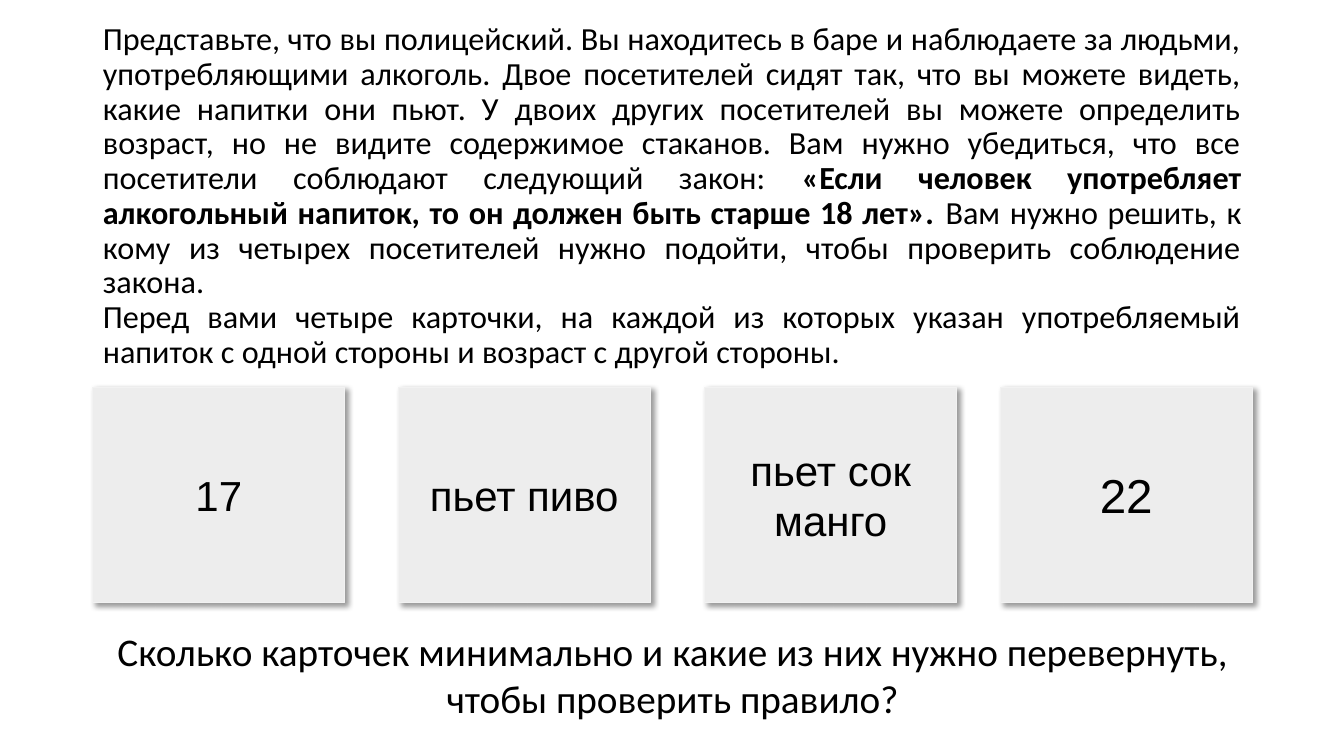
from dataclasses import dataclass

from lxml import etree
from pptx import Presentation
from pptx.dml.color import RGBColor
from pptx.enum.shapes import MSO_SHAPE as Shape
from pptx.enum.text import MSO_ANCHOR as Anchor, MSO_AUTO_SIZE as AutoSize, PP_ALIGN as Align
from pptx.oxml.ns import qn
from pptx.slide import Slide
from pptx.util import Inches, Pt


@dataclass(frozen=True)
class Theme:
    ink: RGBColor = RGBColor(0x00, 0x00, 0x00)
    card_fill: RGBColor = RGBColor(0xED, 0xED, 0xED)
    card_line: RGBColor = RGBColor(0xF2, 0xF2, 0xF2)
    text_font: str = "Calibri"
    card_font: str = "Arial"
    story_size: float = 23
    question_size: float = 28
    card_size: float = 30
    large_card_size: float = 34


@dataclass(frozen=True)
class Card:
    left: float
    label: str
    size: float


THEME = Theme()
MARGIN, CONTENT_WIDTH = 0.92, 11.5
CARD_TOP, CARD_WIDTH, CARD_HEIGHT = 3.84, 2.5, 2.14

SCENE = (
    "Представьте, что вы полицейский. Вы находитесь в баре и наблюдаете за людьми, "
    "употребляющими алкоголь. Двое посетителей сидят так, что вы можете видеть, какие "
    "напитки они пьют. У двоих других посетителей вы можете определить возраст, но не "
    "видите содержимое стаканов. Вам нужно убедиться, что все посетители соблюдают "
    "следующий закон: "
)
LAW = "«Если человек употребляет алкогольный напиток, то он должен быть старше 18 лет». "
TASK = (
    "Вам нужно решить, к кому из четырех посетителей нужно подойти, чтобы проверить "
    "соблюдение закона. "
)
CARDS_INTRO = (
    "Перед вами четыре карточки, на каждой из которых указан употребляемый напиток "
    "с одной стороны и возраст с другой стороны."
)
QUESTION = (
    "Сколько карточек минимально и какие из них нужно перевернуть, чтобы проверить правило?"
)
CARDS = [
    Card(MARGIN, "17", THEME.card_size),
    Card(3.95, "пьет пиво", THEME.card_size),
    Card(6.99, "пьет сок манго", THEME.card_size),
    Card(9.92, "22", THEME.large_card_size),
]


def style(para, align: Align, size: float, font: str) -> None:
    para.alignment = align
    para.font.size = Pt(size)
    para.font.name = font
    para.font.color.rgb = THEME.ink


def add_shadow(box) -> None:
    box.shadow.inherit = False
    effects = box._element.spPr.find(qn("a:effectLst"))
    shadow = etree.SubElement(
        effects, qn("a:outerShdw"), blurRad=str(Pt(4)), dist=str(Pt(3)),
        dir=str(45 * 60000), algn="tl", rotWithShape="0",
    )
    color = etree.SubElement(shadow, qn("a:srgbClr"), val="000000")
    etree.SubElement(color, qn("a:alpha"), val="40000")


def add_story(page: Slide) -> None:
    box = page.shapes.title
    box.left, box.top = Inches(MARGIN), Inches(0.4)
    box.width, box.height = Inches(CONTENT_WIDTH), Inches(3.1)
    frame = box.text_frame
    frame.word_wrap = True
    frame.auto_size = AutoSize.NONE
    frame.vertical_anchor = Anchor.MIDDLE
    para = frame.paragraphs[0]
    style(para, Align.JUSTIFY, THEME.story_size, THEME.text_font)
    para.line_spacing = 0.9
    para.add_run().text = SCENE
    law = para.add_run()
    law.text = LAW
    law.font.bold = True
    para.add_run().text = TASK
    para.add_line_break()
    para.add_run().text = CARDS_INTRO


def add_card(page: Slide, card: Card) -> None:
    box = page.shapes.add_shape(
        Shape.RECTANGLE, Inches(card.left), Inches(CARD_TOP),
        Inches(CARD_WIDTH), Inches(CARD_HEIGHT),
    )
    box.fill.solid()
    box.fill.fore_color.rgb = THEME.card_fill
    box.line.color.rgb = THEME.card_line
    box.line.width = Pt(0.5)
    add_shadow(box)
    frame = box.text_frame
    frame.word_wrap = True
    frame.vertical_anchor = Anchor.MIDDLE
    frame.text = card.label
    style(frame.paragraphs[0], Align.CENTER, card.size, THEME.card_font)


def add_question(page: Slide) -> None:
    box = page.shapes.add_textbox(
        Inches(MARGIN), Inches(6.17), Inches(CONTENT_WIDTH), Inches(1.08)
    )
    frame = box.text_frame
    frame.word_wrap = True
    frame.auto_size = AutoSize.SHAPE_TO_FIT_TEXT
    frame.text = QUESTION
    style(frame.paragraphs[0], Align.CENTER, THEME.question_size, THEME.text_font)


def main() -> None:
    deck = Presentation()
    deck.slide_width, deck.slide_height = Inches(13.33), Inches(7.5)
    page = deck.slides.add_slide(deck.slide_layouts.get_by_name("Title Only"))

    # Story in the title
    add_story(page)

    # Row of four cards
    for card in CARDS:
        add_card(page, card)

    # Closing question
    add_question(page)

    deck.save("out.pptx")


if __name__ == "__main__":
    main()
